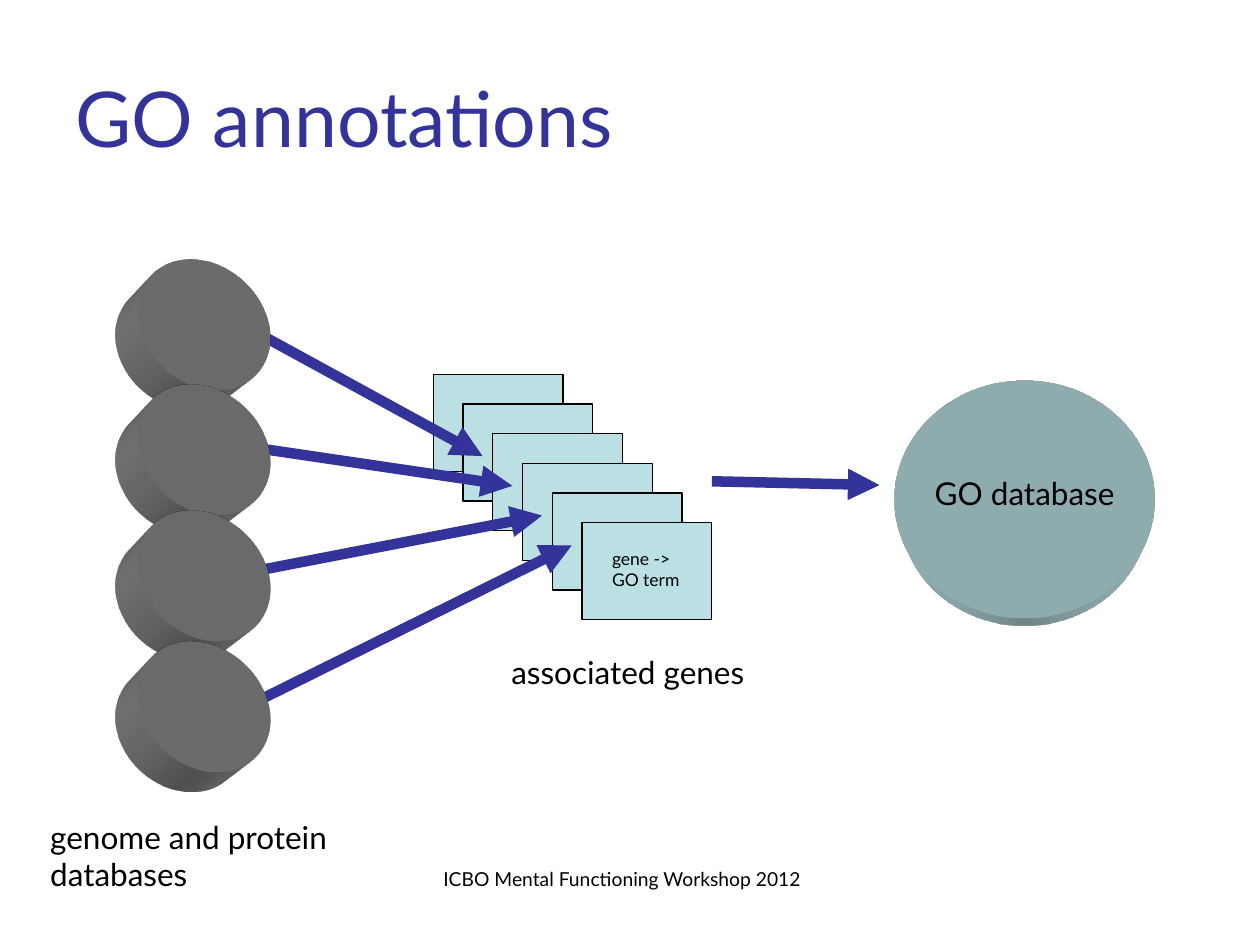
import pptx
import pptx.dml.color
import pptx.enum.shapes
import pptx.enum.text
import pptx.oxml
import pptx.oxml.ns
import pptx.util

FONT = "Lato"
INDIGO, BLACK, PALE, GRAY = "333399", "000000", "BBE0E3", "808080"

# text, left, top, width, height, size, colour
TITLE = ("GO annotations", 0.5, 0.3, 9, 1.25, 44, INDIGO)
CARD_LABEL = ("gene -> GO term", 4.76, 4.3, 0.84, 0.43, 10, BLACK)
GENES_LABEL = ("associated genes", 3.96, 5.13, 2.26, 0.4, 18, BLACK)
GO_LABEL = ("GO database", 7.32, 3.71, 2.33, 0.4, 18, BLACK)
SOURCE_LABEL = ("genome and protein databases", 0.3, 6.44, 2.65, 0.7, 18, BLACK)
FOOTER = ("ICBO Mental Functioning Workshop 2012", 3.42, 6.83, 3.17, 0.52, 11, BLACK)

CARD_COUNT, CARD_LEFT, CARD_TOP, CARD_STEP = 6, 3.44, 2.97, 0.236
CARD_SIZE = (1.03, 0.77)
ARROW_STARTS = [(1.8, 2.51), (1.86, 3.53), (1.83, 4.57), (1.85, 5.66)]
FIRST_TIP = (3.83, 3.62)
RESULT_ARROW = ((5.65, 3.82), (6.98, 3.85))
SOURCE_LEFT, SOURCE_TOPS, SOURCE_SIZE = 1.05, (2.01, 3, 4, 5.04), (1.16, 1.12)
GO_DISC = (7.1, 3.02, 2.06, 1.88)

# camera preset, then latitude and longitude in degrees
SOURCE_VIEW = ("legacyPerspectiveFront", 335, 335)
GO_VIEW = ("legacyPerspectiveBottom", 0, 0)
DEPTH = 430200

inch = pptx.util.Inches
deck = pptx.Presentation()
deck.slide_width, deck.slide_height = inch(10), inch(7.5)
page = deck.slides.add_slide(deck.slide_layouts[6])
PRESET = pptx.enum.shapes.MSO_SHAPE
NAMESPACE = pptx.oxml.ns.nsdecls("a")


def color(value):
    return pptx.dml.color.RGBColor.from_string(value)


def add_text(text, left, top, width, height, size, ink, middle=False):
    box = page.shapes.add_textbox(*map(inch, (left, top, width, height)))
    frame = box.text_frame
    frame.word_wrap = True
    if middle:
        frame.vertical_anchor = pptx.enum.text.MSO_ANCHOR.MIDDLE
    span = frame.paragraphs[0].add_run()
    span.text = text
    span.font.name, span.font.size = FONT, pptx.util.Pt(size)
    span.font.color.rgb = color(ink)


def add_preset(preset, left, top, width, height, fill):
    shape = page.shapes.add_shape(preset, *map(inch, (left, top, width, height)))
    shape.shadow.inherit = False
    shape.fill.solid()
    shape.fill.fore_color.rgb = color(fill)
    return shape


def add_card(index):
    offset = index * CARD_STEP
    card = add_preset(PRESET.RECTANGLE, CARD_LEFT + offset, CARD_TOP + offset,
                      *CARD_SIZE, PALE)
    card.line.color.rgb = color(BLACK)
    card.line.width = pptx.util.Pt(0.75)


def add_disc(left, top, width, height, fill, view):
    """Ellipse extruded into a thick disc."""
    disc = add_preset(PRESET.OVAL, left, top, width, height, fill)
    disc.line.fill.background()
    camera, latitude, longitude = view
    scene = (f'<a:scene3d {NAMESPACE}><a:camera prst="{camera}">'
             f'<a:rot lat="{latitude * 60000}" lon="{longitude * 60000}" rev="0"/></a:camera>'
             '<a:lightRig rig="legacyFlat3" dir="b"/></a:scene3d>')
    solid = (f'<a:sp3d {NAMESPACE} extrusionH="{DEPTH}" prstMaterial="legacyMatte">'
             '<a:bevelT w="13500" h="13500" prst="angle"/>'
             '<a:bevelB w="13500" h="13500" prst="angle"/>'
             f'<a:extrusionClr><a:srgbClr val="{fill}"/></a:extrusionClr></a:sp3d>')
    for part in (scene, solid):
        disc._element.spPr.append(pptx.oxml.parse_xml(part))


def add_arrow(start, end):
    arrow = page.shapes.add_connector(pptx.enum.shapes.MSO_CONNECTOR.STRAIGHT,
                                      *map(inch, start + end))
    arrow.line.color.rgb = color(INDIGO)
    arrow.line.width = pptx.util.Pt(6)
    properties = arrow._element.spPr
    properties.find(pptx.oxml.ns.qn("a:ln")).append(
        pptx.oxml.parse_xml(f'<a:tailEnd {NAMESPACE} type="triangle"/>'))
    properties.append(pptx.oxml.parse_xml(f"<a:effectLst {NAMESPACE}/>"))


for index in range(CARD_COUNT):
    add_card(index)
add_text(*CARD_LABEL)
add_text(*GENES_LABEL)
add_text(*TITLE, middle=True)
add_arrow(*RESULT_ARROW)
add_disc(*GO_DISC, PALE, GO_VIEW)
add_text(*GO_LABEL)
for index, start in enumerate(ARROW_STARTS):
    add_arrow(start, tuple(edge + index * CARD_STEP for edge in FIRST_TIP))
for top in SOURCE_TOPS:
    add_disc(SOURCE_LEFT, top, *SOURCE_SIZE, GRAY, SOURCE_VIEW)
add_text(*SOURCE_LABEL)
add_text(*FOOTER)

deck.save("out.pptx")
